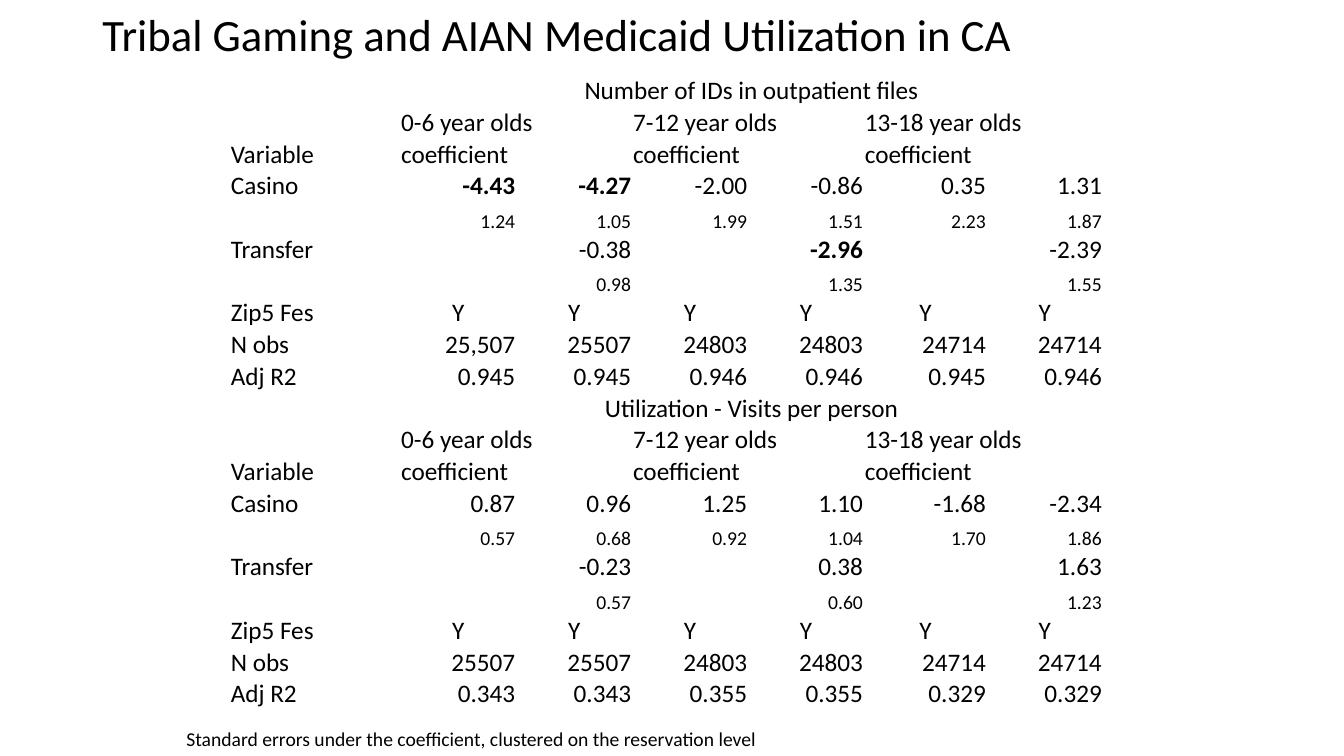
from pptx import Presentation
from pptx.dml.color import RGBColor
from pptx.enum.text import MSO_ANCHOR, MSO_AUTO_SIZE, PP_ALIGN
from pptx.util import Pt

COLORS = {"text": "000000"}
FONT = "Calibri"
WIDTHS = [121.7, 82.8, 82.8, 82.8, 82.8, 87.8, 82.8]
ROW = 22.1
LEFT, MID, RIGHT = PP_ALIGN.LEFT, PP_ALIGN.CENTER, PP_ALIGN.RIGHT
BOLD = {"-4.43", "-4.27", "-2.96"}

# Rows shared by both panels
AGES = ["", "0-6 year olds", "", "7-12 year olds", "", "13-18 year olds", ""]
HEADS = ["Variable"] + ["coefficient", ""] * 3
FIXED = ["Zip5 Fes"] + ["Y"] * 6

# Each panel: heading, then its rows of estimates
PANELS = [
    ("Number of IDs in outpatient files", [
        ["Casino", "-4.43", "-4.27", "-2.00", "-0.86", "0.35", "1.31"],
        ["", "1.24", "1.05", "1.99", "1.51", "2.23", "1.87"],
        ["Transfer", "", "-0.38", "", "-2.96", "", "-2.39"],
        ["", "", "0.98", "", "1.35", "", "1.55"],
        FIXED,
        ["N obs", "25,507", "25507", "24803", "24803", "24714", "24714"],
        ["Adj R2", "0.945", "0.945", "0.946", "0.946", "0.945", "0.946"],
    ]),
    ("Utilization - Visits per person", [
        ["Casino", "0.87", "0.96", "1.25", "1.10", "-1.68", "-2.34"],
        ["", "0.57", "0.68", "0.92", "1.04", "1.70", "1.86"],
        ["Transfer", "", "-0.23", "", "0.38", "", "1.63"],
        ["", "", "0.57", "", "0.60", "", "1.23"],
        FIXED,
        ["N obs", "25507", "25507", "24803", "24803", "24714", "24714"],
        ["Adj R2", "0.343", "0.343", "0.355", "0.355", "0.329", "0.329"],
    ]),
]


def write(frame, text, size=18, bold=False, align=LEFT, spacing=None):
    para = frame.paragraphs[0]
    para.alignment = align
    para.line_spacing = spacing
    run = para.add_run()
    run.text = text
    font = run.font
    font.name, font.size, font.bold = FONT, Pt(size), bold
    font.color.rgb = RGBColor.from_string(COLORS["text"])


def add_title(slide, text):
    title = slide.shapes.title
    title.left, title.top = Pt(66), Pt(0)
    title.width, title.height = Pt(828), Pt(53)
    frame = title.text_frame
    frame.auto_size = MSO_AUTO_SIZE.NONE
    frame.vertical_anchor = MSO_ANCHOR.MIDDLE
    write(frame, text, size=32, spacing=0.9)


def add_note(slide, text):
    box = slide.shapes.add_textbox(Pt(126), Pt(515.7), Pt(688), Pt(24.2))
    box.text_frame.word_wrap = True
    write(box.text_frame, text, size=14)


def fill_row(grid, row, texts, **style):
    for col, text in enumerate(texts):
        if text:
            look = {**style, "align": style.get("align", LEFT) if col else LEFT}
            write(grid.cell(row, col).text_frame, text, bold=text in BOLD, **look)


def fill_panel(grid, top, heading, rows):
    # Headings span the columns that they describe
    spans = [(0, 1, 6)] + [(1, col, col + 1) for col in (1, 3, 5)]
    spans += [(2, col, col + 1) for col in (1, 3)]
    for row, first, last in spans:
        grid.cell(top + row, first).merge(grid.cell(top + row, last))
    fill_row(grid, top, ["", heading], align=MID)
    fill_row(grid, top + 1, AGES)
    fill_row(grid, top + 2, HEADS)

    # Unlabelled rows hold the smaller standard errors
    for row, texts in enumerate(rows, top + 3):
        fill_row(grid, row, texts, size=18 if texts[0] else 14,
                 align=MID if texts is FIXED else RIGHT)


def add_grid(slide):
    step = 3 + len(PANELS[0][1])
    count = step * len(PANELS)
    grid = slide.shapes.add_table(count, len(WIDTHS), Pt(164.2), Pt(53.3),
                                  Pt(sum(WIDTHS)), Pt(ROW * count)).table
    grid.first_row = grid.horz_banding = False
    for col, width in zip(grid.columns, WIDTHS):
        col.width = Pt(width)
    for cell in grid.iter_cells():
        cell.fill.background()
        cell.vertical_anchor = MSO_ANCHOR.BOTTOM
        cell.margin_left = cell.margin_right = cell.margin_top = Pt(0.7)
        cell.margin_bottom = Pt(0)
    for index, (heading, rows) in enumerate(PANELS):
        fill_panel(grid, index * step, heading, rows)


def main():
    deck = Presentation()
    deck.slide_width, deck.slide_height = Pt(960), Pt(540)
    slide = deck.slides.add_slide(deck.slide_layouts[5])
    add_title(slide, "Tribal Gaming and AIAN Medicaid Utilization in CA")
    add_grid(slide)
    add_note(slide, "Standard errors under the coefficient, "
                    "clustered on the reservation level")
    deck.save("out.pptx")


if __name__ == "__main__":
    main()
